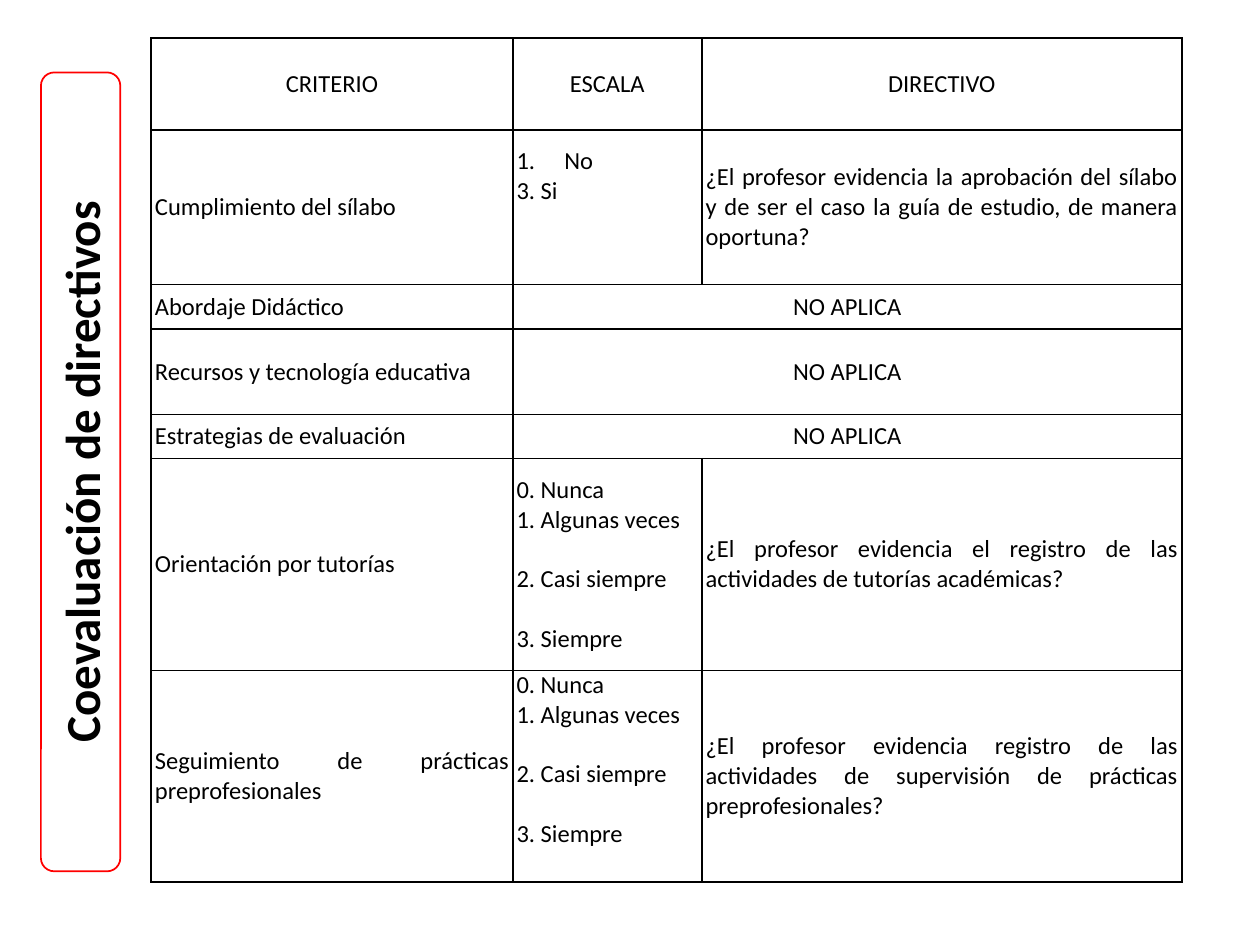
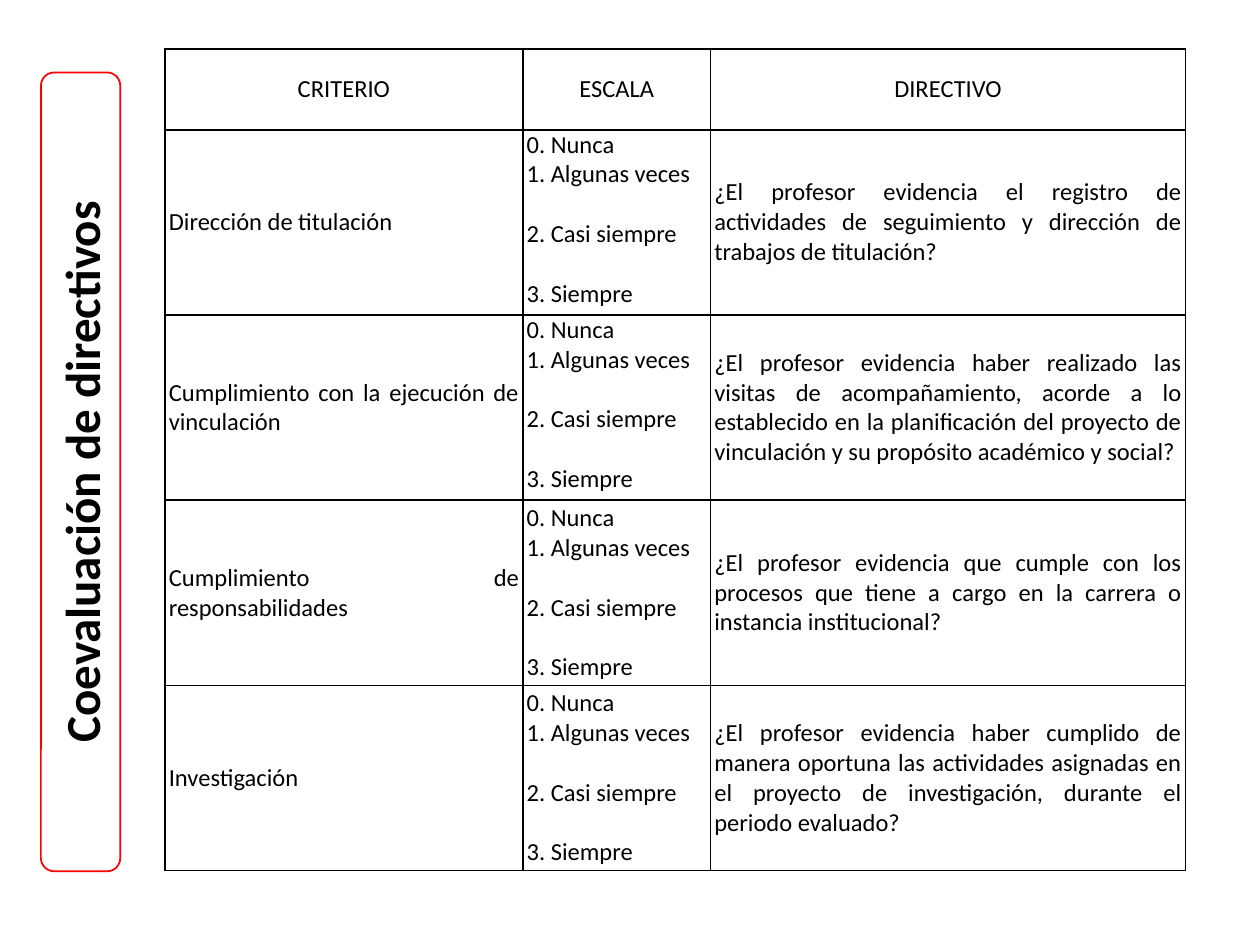
from dataclasses import dataclass

from lxml import etree
from pptx import Presentation
from pptx.dml.color import RGBColor
from pptx.enum.shapes import MSO_SHAPE
from pptx.enum.text import MSO_ANCHOR, PP_ALIGN
from pptx.oxml.ns import qn
from pptx.slide import Slide
from pptx.table import _Cell
from pptx.text.text import TextFrame
from pptx.util import Inches, Pt

ROUNDED = MSO_SHAPE.ROUNDED_RECTANGLE
TOP, MIDDLE = MSO_ANCHOR.TOP, MSO_ANCHOR.MIDDLE
LEFT, CENTER, JUSTIFY = PP_ALIGN.LEFT, PP_ALIGN.CENTER, PP_ALIGN.JUSTIFY

FONT = "Calibri"
BLACK, WHITE, RED = "000000", "FFFFFF", "FF0000"
TITLE = "Coevaluación de directivos"
HEADERS = ("CRITERIO", "ESCALA", "DIRECTIVO")
NOT_APPLICABLE = "NO APLICA"
FREQUENCIES = ("0. Nunca", "1. Algunas veces", "2. Casi siempre", "3. Siempre")
YES_NO = ("No", "3. Si")
SPACED_FROM = 2
LINE_GAP = 17


@dataclass(frozen=True)
class Criterion:
    name: str
    height: float
    question: str = ""
    scale: tuple[str, ...] = FREQUENCIES
    anchor: MSO_ANCHOR = MIDDLE
    top_inset: float = 0


@dataclass(frozen=True)
class Rubric:
    left: float
    top: float
    widths: tuple[float, ...]
    header_height: float
    criteria: tuple[Criterion, ...]


RUBRICS = (
    Rubric(1.2, 0.3, (2.87, 1.5, 3.81), 0.73, (
        Criterion("Cumplimiento del sílabo", 1.23,
                  "¿El profesor evidencia la aprobación del sílabo y de ser el caso "
                  "la guía de estudio, de manera oportuna?",
                  YES_NO, TOP, 0.13),
        Criterion("Abordaje Didáctico", 0.35),
        Criterion("Recursos y tecnología educativa", 0.68),
        Criterion("Estrategias de evaluación", 0.35),
        Criterion("Orientación por tutorías", 1.68,
                  "¿El profesor evidencia el registro de las actividades de tutorías "
                  "académicas?"),
        Criterion("Seguimiento de prácticas preprofesionales", 1.68,
                  "¿El profesor evidencia registro de las actividades de supervisión "
                  "de prácticas preprofesionales?", anchor=TOP),
    )),
    Rubric(1.31, 0.39, (2.84, 1.49, 3.77), 0.64, (
        Criterion("Dirección de titulación", 1.47,
                  "¿El profesor evidencia el registro de actividades de seguimiento y "
                  "dirección de trabajos de titulación?", anchor=TOP),
        Criterion("Cumplimiento con la ejecución de vinculación", 1.47,
                  "¿El profesor evidencia haber realizado las visitas de "
                  "acompañamiento, acorde a lo establecido en la planificación del "
                  "proyecto de vinculación y su propósito académico y social?",
                  anchor=TOP),
        Criterion("Cumplimiento de responsabilidades", 1.47,
                  "¿El profesor evidencia que cumple con los procesos que tiene a "
                  "cargo en la carrera o instancia institucional?"),
        Criterion("Investigación", 1.47,
                  "¿El profesor evidencia haber cumplido de manera oportuna las "
                  "actividades asignadas en el proyecto de investigación, durante el "
                  "periodo evaluado?"),
    )),
)


def rgb(value: str) -> RGBColor:
    return RGBColor.from_string(value)


def add_text(tf: TextFrame, text: str, *, size: float = 14, bold: bool = False,
             align: PP_ALIGN = LEFT, before: float = 0, new: bool = False,
             numbered: bool = False) -> None:
    p = tf.add_paragraph() if new else tf.paragraphs[0]
    p.alignment = align
    p.space_before = Pt(before)
    if numbered:
        pPr = p._p.get_or_add_pPr()
        pPr.set("marL", str(Inches(0.38)))
        pPr.set("indent", str(-Inches(0.38)))
        etree.SubElement(pPr, qn("a:buFont")).set("typeface", "+mj-lt")
        etree.SubElement(pPr, qn("a:buAutoNum")).set("type", "arabicPeriod")
    r = p.add_run()
    r.text = text
    r.font.name = FONT
    r.font.size = Pt(size)
    r.font.bold = bold
    r.font.color.rgb = rgb(BLACK)


def format_cell(cell: _Cell) -> None:
    tcPr = cell._tc.get_or_add_tcPr()
    for side in ("lnL", "lnR", "lnT", "lnB"):
        ln = etree.SubElement(tcPr, qn(f"a:{side}"), w=str(Pt(1)))
        fill = etree.SubElement(ln, qn("a:solidFill"))
        etree.SubElement(fill, qn("a:srgbClr"), val=BLACK)
    cell.fill.background()
    cell.margin_left = cell.margin_right = Inches(0.03)
    cell.margin_top = cell.margin_bottom = 0
    cell.vertical_anchor = MIDDLE


def add_scale(cell: _Cell, criterion: Criterion) -> None:
    cell.vertical_anchor = criterion.anchor
    cell.margin_top = Inches(criterion.top_inset)
    for i, label in enumerate(criterion.scale):
        add_text(cell.text_frame, label, new=i > 0,
                 before=LINE_GAP if i >= SPACED_FROM else 0,
                 numbered=label == YES_NO[0])


def add_side_title(s: Slide) -> None:
    sp = s.shapes.add_shape(ROUNDED, Inches(-2.53), Inches(3.43),
                            Inches(6.34), Inches(0.63))
    sp.rotation = 270
    sp.shadow.inherit = False
    sp.fill.solid()
    sp.fill.fore_color.rgb = rgb(WHITE)
    sp.line.color.rgb = rgb(RED)
    sp.line.width = Pt(1)
    sp.text_frame.vertical_anchor = MIDDLE
    add_text(sp.text_frame, TITLE, size=28, bold=True, align=CENTER)


def add_rubric(s: Slide, rubric: Rubric) -> None:
    heights = [rubric.header_height, *(c.height for c in rubric.criteria)]
    table = s.shapes.add_table(
        len(heights), len(HEADERS), Inches(rubric.left), Inches(rubric.top),
        Inches(sum(rubric.widths)), Inches(sum(heights))).table
    table.first_row = table.horz_banding = False
    for column, width in zip(table.columns, rubric.widths):
        column.width = Inches(width)
    for row, height in zip(table.rows, heights):
        row.height = Inches(height)
    for cell in table.iter_cells():
        format_cell(cell)
    for col, header in enumerate(HEADERS):
        add_text(table.cell(0, col).text_frame, header, align=CENTER)
    for row, criterion in enumerate(rubric.criteria, start=1):
        name, scale, question = (table.cell(row, col) for col in range(len(HEADERS)))
        add_text(name.text_frame, criterion.name, align=JUSTIFY)
        if criterion.question:
            add_scale(scale, criterion)
            add_text(question.text_frame, criterion.question, align=JUSTIFY)
        else:
            scale.merge(question)
            add_text(scale.text_frame, NOT_APPLICABLE, align=CENTER)


def main() -> None:
    prs = Presentation()
    prs.slide_width, prs.slide_height = Inches(10), Inches(7.5)
    for rubric in RUBRICS:
        s = prs.slides.add_slide(prs.slide_layouts[6])
        add_side_title(s)
        add_rubric(s, rubric)
    prs.save("out.pptx")


if __name__ == "__main__":
    main()
